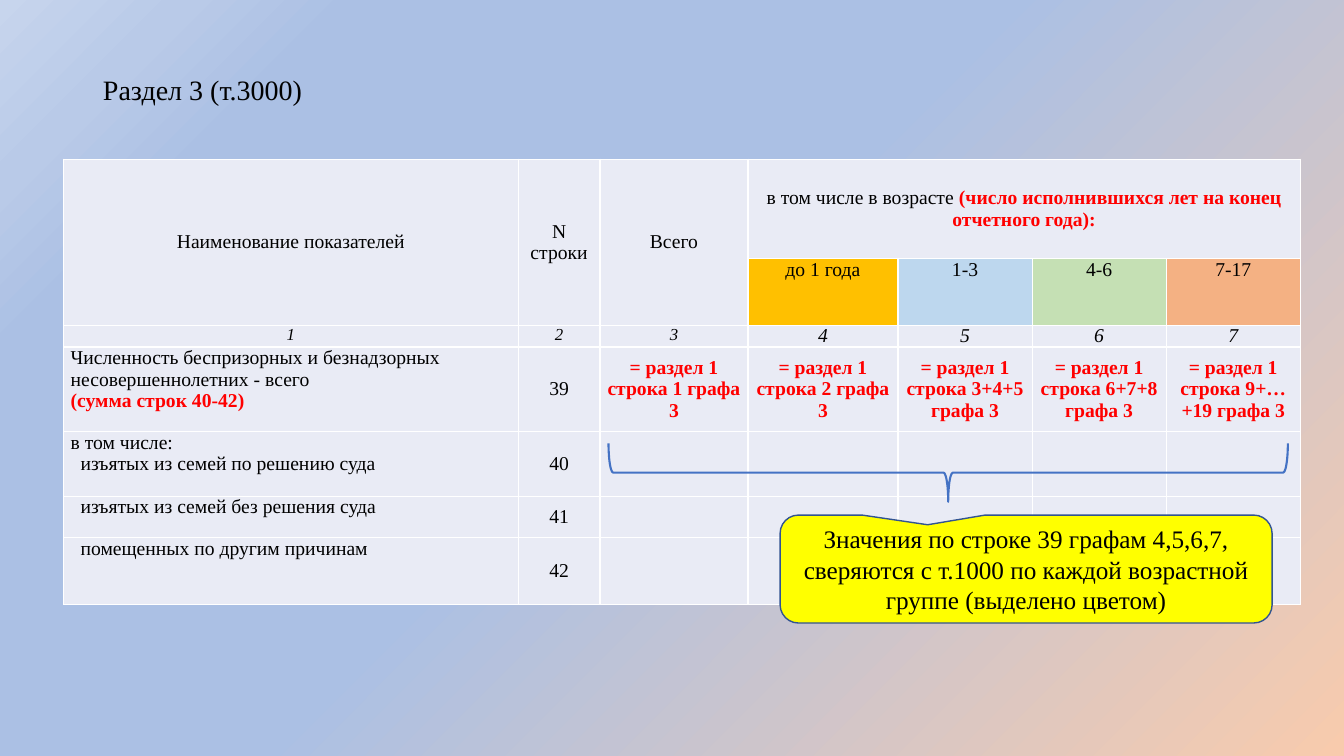
from dataclasses import dataclass

from lxml.etree import SubElement
from pptx import Presentation
from pptx.dml.color import RGBColor
from pptx.enum.shapes import MSO_SHAPE as Preset
from pptx.enum.text import MSO_ANCHOR as Anchor, PP_ALIGN as Align
from pptx.oxml.ns import qn
from pptx.shapes.autoshape import Shape
from pptx.slide import Slide
from pptx.table import _Cell as Cell
from pptx.text.text import TextFrame
from pptx.util import Cm, Pt


@dataclass(frozen=True)
class Theme:
    font: str = "Times New Roman"
    ink: str = "000000"
    accent: str = "FF0000"
    cell: str = "E9EBF5"
    border: str = "FFFFFF"
    ages: tuple[str, ...] = ("FFC000", "BDD7EE", "C5E0B4", "F4B183")
    callout: str = "FFFF00"
    callout_line: str = "325491"
    brace: str = "4472C4"
    background: tuple[tuple[int, str], ...] = (
        (0, "F8CBAD"), (52, "ABC0E4"), (83, "ABC0E4"), (91, "B9CAE8"), (100, "C7D5ED"))
    title_size: int = 20
    callout_size: int = 18
    table_size: int = 14
    number_size: int = 12


THEME = Theme()


@dataclass(frozen=True)
class Line:
    text: str
    accent: str = ""
    indent: float = 0


@dataclass(frozen=True)
class Entry:
    row: int
    column: int
    lines: tuple[Line, ...]
    align: Align = Align.CENTER
    anchor: Anchor = Anchor.MIDDLE
    fill: str = THEME.cell
    size: int = THEME.table_size
    italic: bool = False


@dataclass(frozen=True)
class Box:
    left: float
    top: float
    width: float
    height: float

    def lengths(self) -> tuple[Cm, Cm, Cm, Cm]:
        return Cm(self.left), Cm(self.top), Cm(self.width), Cm(self.height)


TITLE_BOX = Box(2.34, 1.55, 29.21, 1.52)
TABLE_BOX = Box(1.6, 4.01, 31.17, 11.2)
CALLOUT_BOX = Box(19.66, 12.98, 12.4, 2.72)
BRACE_BOX = Box(23.16, 3.35, 1.47, 17.12)
COLUMNS = (11.46, 2.06, 3.73, 3.78, 3.38, 3.38, 3.38)
ROWS = (2.51, 1.68, 0.53, 2.13, 1.63, 1.04, 1.68)
MERGES = ((0, 0, 1, 0), (0, 1, 1, 1), (0, 2, 1, 2), (0, 3, 0, 6))
AGES = ("до 1 года", "1-3", "4-6", "7-17")
SOURCES = ("1 графа 3", "2 графа 3", "3+4+5 графа 3", "6+7+8 графа 3", "9+…+19 графа 3")
INDENT = 0.25
INDICATORS = (
    (Line("Численность беспризорных и безнадзорных несовершеннолетних - всего"),
     Line("", "(сумма строк 40-42)")),
    (Line("в том числе:"), Line("изъятых из семей по решению суда", indent=INDENT)),
    (Line("изъятых из семей без решения суда", indent=INDENT),),
    (Line("помещенных по другим причинам", indent=INDENT),),
)


def table_entries() -> list[Entry]:
    entries = [
        Entry(0, 0, (Line("Наименование показателей"),)),
        Entry(0, 1, (Line("N"), Line("строки"))),
        Entry(0, 2, (Line("Всего"),)),
        Entry(0, 3, (Line("в том числе в возрасте ",
                          "(число исполнившихся лет на конец отчетного года):"),)),
    ]
    for column, (age, color) in enumerate(zip(AGES, THEME.ages), 3):
        entries.append(Entry(1, column, (Line(age),), anchor=Anchor.TOP, fill=color))
    for column in range(len(COLUMNS)):
        size = THEME.number_size if column < 3 else THEME.table_size
        entries.append(Entry(2, column, (Line(str(column + 1)),), anchor=Anchor.TOP,
                             size=size, italic=True))
    for row, lines in enumerate(INDICATORS, 3):
        entries.append(Entry(row, 0, lines, Align.LEFT, Anchor.TOP))
        entries.append(Entry(row, 1, (Line(str(row + 36)),)))
    for column, source in enumerate(SOURCES, 2):
        entries.append(Entry(3, column, (Line("", f"= раздел 1 строка {source}"),)))
    return entries


def write(frame: TextFrame, lines: tuple[Line, ...], *, size: int,
          align: Align = Align.CENTER, italic: bool = False, spacing: float = 1.0) -> None:
    frame.word_wrap = True
    for number, line in enumerate(lines):
        para = frame.add_paragraph() if number else frame.paragraphs[0]
        para.alignment = align
        para.line_spacing = spacing
        if line.indent:
            properties = para._p.get_or_add_pPr()
            properties.set("marL", "0")
            properties.set("indent", str(Cm(line.indent)))
        for text, color, bold in ((line.text, THEME.ink, False),
                                  (line.accent, THEME.accent, True)):
            if text:
                span = para.add_run()
                span.text = text
                span.font.name = THEME.font
                span.font.size = Pt(size)
                span.font.bold = bold
                span.font.italic = italic
                span.font.color.rgb = RGBColor.from_string(color)


def paint_background(slide: Slide) -> None:
    fill = slide.background.fill
    fill.gradient()
    gradient = slide.background._cSld.find(".//" + qn("a:gradFill"))
    stops = gradient.find(qn("a:gsLst"))
    for stop in list(stops):
        stops.remove(stop)
    for position, color in THEME.background:
        stop = SubElement(stops, qn("a:gs"), pos=str(position * 1000))
        SubElement(stop, qn("a:srgbClr"), val=color)
    gradient.find(qn("a:lin")).set("ang", str(225 * 60000))


def style_cell(cell: Cell) -> None:
    properties = cell._tc.get_or_add_tcPr()
    for side in ("lnL", "lnR", "lnT", "lnB"):
        border = SubElement(properties, qn(f"a:{side}"), w=str(Pt(1)))
        solid = SubElement(border, qn("a:solidFill"))
        SubElement(solid, qn("a:srgbClr"), val=THEME.border)
    cell.fill.solid()
    cell.fill.fore_color.rgb = RGBColor.from_string(THEME.cell)
    cell.margin_left = cell.margin_right = Cm(0.18)
    cell.margin_top = cell.margin_bottom = 0


def add_indicator_table(slide: Slide) -> None:
    table = slide.shapes.add_table(len(ROWS), len(COLUMNS), *TABLE_BOX.lengths()).table
    table.first_row = table.horz_banding = False
    for column, width in zip(table.columns, COLUMNS):
        column.width = Cm(width)
    for row, height in zip(table.rows, ROWS):
        row.height = Cm(height)
    for cell in table.iter_cells():
        style_cell(cell)
    for top, left, bottom, right in MERGES:
        table.cell(top, left).merge(table.cell(bottom, right))
    for entry in table_entries():
        cell = table.cell(entry.row, entry.column)
        cell.fill.fore_color.rgb = RGBColor.from_string(entry.fill)
        cell.vertical_anchor = entry.anchor
        write(cell.text_frame, entry.lines, size=entry.size, align=entry.align,
              italic=entry.italic)


def add_outline(slide: Slide, preset: Preset, box: Box, color: str, width: float,
                adjustments: tuple[float, ...]) -> Shape:
    shape = slide.shapes.add_shape(preset, *box.lengths())
    shape.shadow.inherit = False
    shape.line.color.rgb = RGBColor.from_string(color)
    shape.line.width = Pt(width)
    for number, value in enumerate(adjustments):
        shape.adjustments[number] = value
    return shape


def main() -> None:
    deck = Presentation()
    deck.slide_width, deck.slide_height = Cm(33.87), Cm(19.05)
    page = deck.slides.add_slide(deck.slide_layouts[5])
    paint_background(page)

    title = page.shapes.title
    title.left, title.top, title.width, title.height = TITLE_BOX.lengths()
    title.text_frame.vertical_anchor = Anchor.MIDDLE
    write(title.text_frame, (Line("Раздел 3 (т.3000)"),), size=THEME.title_size,
          align=Align.LEFT, spacing=0.9)

    add_indicator_table(page)

    callout = add_outline(page, Preset.ROUNDED_RECTANGULAR_CALLOUT, CALLOUT_BOX,
                          THEME.callout_line, 1, (-0.2, -0.41, 0.17))
    callout.fill.solid()
    callout.fill.fore_color.rgb = RGBColor.from_string(THEME.callout)
    write(callout.text_frame, (Line("Значения по строке 39 графам 4,5,6,7, сверяются с т.1000 "
                                    "по каждой возрастной группе (выделено цветом)"),),
          size=THEME.callout_size)

    brace = add_outline(page, Preset.RIGHT_BRACE, BRACE_BOX, THEME.brace, 1.5, (0.08, 0.5))
    brace.fill.background()
    brace.rotation = 90

    deck.save("out.pptx")


if __name__ == "__main__":
    main()
